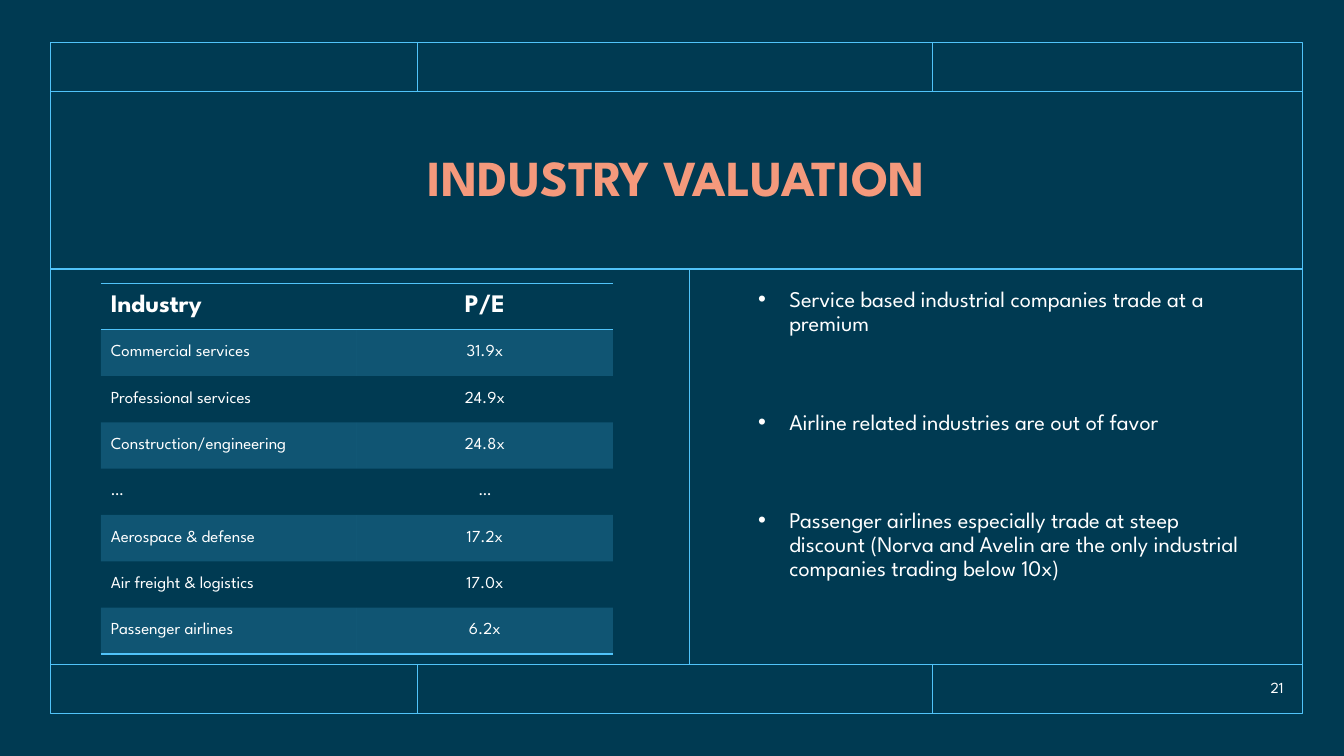
from dataclasses import dataclass

from lxml import etree
from pptx import Presentation
from pptx.dml.color import RGBColor
from pptx.enum.shapes import MSO_CONNECTOR, MSO_SHAPE
from pptx.enum.text import MSO_ANCHOR, PP_ALIGN
from pptx.oxml.ns import qn
from pptx.util import Inches, Pt


@dataclass(frozen=True)
class Theme:
    font: str = "League Spartan"
    background: str = "003A52"
    line: str = "51C3F9"
    title: str = "F4997C"
    text: str = "FFFFFF"
    band_alpha: int = 20
    line_width: float = 1
    title_size: float = 36
    header_size: float = 18
    bullet_size: float = 16
    cell_size: float = 12
    number_size: float = 11


theme = Theme()


def add_run(paragraph, text, size, color=theme.text, bold=False):
    run = paragraph.add_run()
    run.text = text
    run.font.name = theme.font
    run.font.size = Pt(size)
    run.font.bold = bold
    run.font.color.rgb = RGBColor.from_string(color)


def set_borders(cell, ruled_sides):
    """Rule the given sides (T, B) of a cell and clear the others."""
    properties = cell._tc.get_or_add_tcPr()
    for side in "LRTB":
        border = etree.SubElement(properties, qn(f"a:ln{side}"))
        if side in ruled_sides:
            border.set("w", str(Pt(theme.line_width)))
            fill = etree.SubElement(border, qn("a:solidFill"))
            etree.SubElement(fill, qn("a:srgbClr"), val=theme.line)
        else:
            border.set("w", "0")
            etree.SubElement(border, qn("a:noFill"))


presentation = Presentation()
presentation.slide_width = Inches(13.33)
presentation.slide_height = Inches(7.5)
slide = presentation.slides.add_slide(presentation.slide_layouts[5])
slide.background.fill.solid()
slide.background.fill.fore_color.rgb = RGBColor.from_string(theme.background)

# Frame and grid lines
left, right = 0.5, 12.92
top, header_bottom, title_bottom, footer_top, bottom = 0.42, 0.91, 2.67, 6.59, 7.08
frame = slide.shapes.add_shape(
    MSO_SHAPE.RECTANGLE, Inches(left), Inches(top), Inches(right - left), Inches(bottom - top)
)
frame.shadow.inherit = False
frame.fill.background()
frame.line.color.rgb = RGBColor.from_string(theme.line)
frame.line.width = Pt(theme.line_width)

grid_lines = [(left, y, right, y) for y in (header_bottom, title_bottom, footer_top)]
for x in (4.14, 9.25):
    grid_lines += [(x, top, x, header_bottom), (x, footer_top, x, bottom)]
grid_lines.append((6.84, title_bottom, 6.84, footer_top))
for ends in grid_lines:
    connector = slide.shapes.add_connector(MSO_CONNECTOR.STRAIGHT, *map(Inches, ends))
    connector.line.color.rgb = RGBColor.from_string(theme.line)
    connector.line.width = Pt(theme.line_width)
    etree.SubElement(connector._element.spPr, qn("a:effectLst"))

# Title
title = slide.shapes.title
title.left, title.top = Inches(left), Inches(header_bottom)
title.width, title.height = Inches(right - left), Inches(title_bottom - header_bottom)
title.text_frame.vertical_anchor = MSO_ANCHOR.MIDDLE
paragraph = title.text_frame.paragraphs[0]
paragraph.alignment = PP_ALIGN.CENTER
paragraph.line_spacing = 0.9
add_run(paragraph, "INDUSTRY VALUATION", theme.title_size, theme.title, bold=True)

# Valuation table
valuations = [
    ("Industry", "P/E"),
    ("Commercial services", "31.9x"),
    ("Professional services", "24.9x"),
    ("Construction/engineering", "24.8x"),
    ("…", "…"),
    ("Aerospace & defense", "17.2x"),
    ("Air freight & logistics", "17.0x"),
    ("Passenger airlines", "6.2x"),
]
table = slide.shapes.add_table(
    len(valuations), 2, Inches(1), Inches(2.81), Inches(5.08), Inches(3.68)
).table
for row, values in enumerate(valuations):
    is_header = row == 0
    ruled_sides = "TB" if is_header else "B" if row == len(valuations) - 1 else ""
    if row == 1:
        ruled_sides = "T"
    for column, value in enumerate(values):
        cell = table.cell(row, column)
        cell.vertical_anchor = MSO_ANCHOR.MIDDLE
        set_borders(cell, ruled_sides)
        if row % 2:
            cell.fill.solid()
            cell.fill.fore_color.rgb = RGBColor.from_string(theme.line)
            color = cell._tc.tcPr.find(qn("a:solidFill")).find(qn("a:srgbClr"))
            etree.SubElement(color, qn("a:alpha"), val=str(theme.band_alpha * 1000))
        else:
            cell.fill.background()
        paragraph = cell.text_frame.paragraphs[0]
        paragraph.alignment = PP_ALIGN.CENTER if column else PP_ALIGN.LEFT
        size = theme.header_size if is_header else theme.cell_size
        add_run(paragraph, value, size, bold=is_header)

# Takeaways
takeaways = [
    "Service based industrial companies trade at a premium",
    "Airline related industries are out of favor",
    "Passenger airlines especially trade at steep discount "
    "(Norva and Avelin are the only industrial companies trading below 10x)",
]
text_frame = slide.shapes.add_textbox(
    Inches(7.42), Inches(2.81), Inches(5.08), Inches(3.51)
).text_frame
text_frame.word_wrap = True
for index, takeaway in enumerate(takeaways):
    paragraph = text_frame.add_paragraph() if index else text_frame.paragraphs[0]
    paragraph.line_spacing = 0.9
    paragraph.space_before = Pt(53 if index else 0)
    properties = paragraph._p.get_or_add_pPr()
    properties.set("marL", str(Inches(0.31)))
    properties.set("indent", str(Inches(-0.31)))
    bullet_color = etree.SubElement(properties, qn("a:buClr"))
    etree.SubElement(bullet_color, qn("a:srgbClr"), val=theme.text)
    etree.SubElement(properties, qn("a:buFont"), typeface="Arial")
    etree.SubElement(properties, qn("a:buChar"), char="•")
    add_run(paragraph, takeaway, theme.bullet_size)

# Slide number
text_frame = slide.shapes.add_textbox(
    Inches(11.91), Inches(6.67), Inches(0.92), Inches(0.3)
).text_frame
text_frame.word_wrap = True
text_frame.vertical_anchor = MSO_ANCHOR.MIDDLE
paragraph = text_frame.paragraphs[0]
paragraph.alignment = PP_ALIGN.RIGHT
add_run(paragraph, "21", theme.number_size)

presentation.save("out.pptx")
